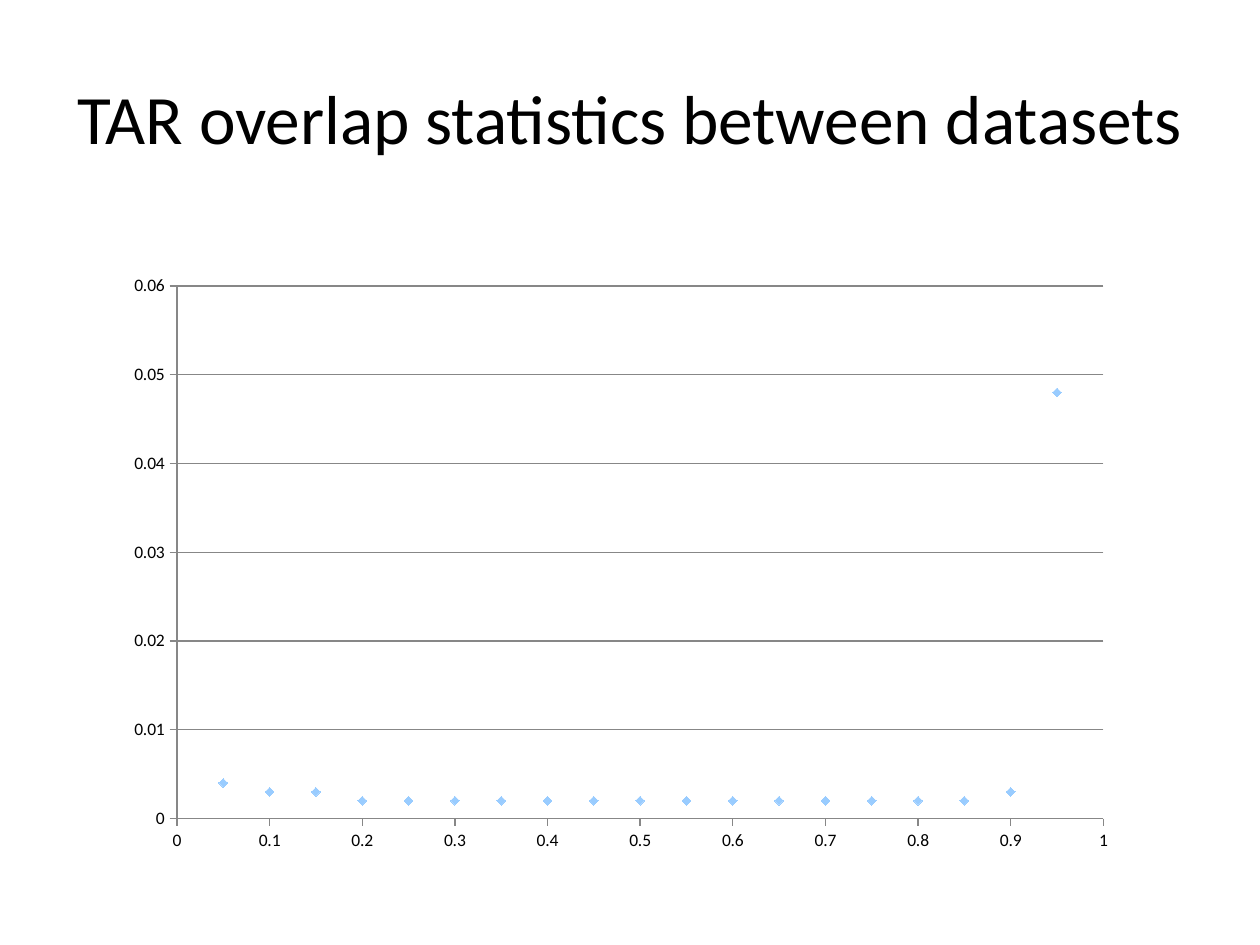
from dataclasses import dataclass

from lxml import etree
from pptx import Presentation
from pptx.chart.data import XyChartData
from pptx.dml.color import RGBColor
from pptx.enum.chart import XL_CHART_TYPE, XL_MARKER_STYLE, XL_TICK_MARK
from pptx.enum.text import MSO_ANCHOR, PP_ALIGN
from pptx.oxml.ns import qn
from pptx.util import Inches, Pt

SCATTER = XL_CHART_TYPE.XY_SCATTER
DIAMOND = XL_MARKER_STYLE.DIAMOND
TICK_OUTSIDE = XL_TICK_MARK.OUTSIDE
TICK_NONE = XL_TICK_MARK.NONE
CENTER = PP_ALIGN.CENTER
MIDDLE = MSO_ANCHOR.MIDDLE

BLACK = RGBColor(0x00, 0x00, 0x00)
GRAY = RGBColor(0x87, 0x87, 0x87)
LIGHT_BLUE = RGBColor(0x99, 0xCC, 0xFF)
FONT = "Calibri"

OVERLAP_STEP = 0.05
FREQUENCIES = [0.004, 0.003, 0.003] + [0.002] * 14 + [0.003, 0.048]


@dataclass(frozen=True)
class AxisScale:
    maximum: float
    step: float
    gridlines: bool


OVERLAP_SCALE = AxisScale(1, 0.1, False)
FREQUENCY_SCALE = AxisScale(0.06, 0.01, True)


def format_axis(axis, scale: AxisScale) -> None:
    axis.minimum_scale = 0
    axis.maximum_scale = scale.maximum
    axis.major_unit = scale.step
    axis.major_tick_mark = TICK_OUTSIDE
    axis.minor_tick_mark = TICK_NONE
    axis.tick_labels.number_format = "General"
    axis.tick_labels.number_format_is_linked = False
    axis.has_major_gridlines = scale.gridlines
    lines = [axis.format.line]
    if scale.gridlines:
        lines.append(axis.major_gridlines.format.line)
    for line in lines:
        line.color.rgb = GRAY
        line.width = Pt(0.75)


def set_plot_area(chart, x: float, y: float, w: float, h: float) -> None:
    """Fix the inner plot area, in fractions of the chart frame."""
    plot_area = chart.plots[0]._element.getparent()
    for old_layout in plot_area.findall(qn("c:layout")):
        plot_area.remove(old_layout)
    layout = etree.Element(qn("c:layout"))
    plot_area.insert(0, layout)
    manual = etree.SubElement(layout, qn("c:manualLayout"))
    settings = {"layoutTarget": "inner", "xMode": "edge", "yMode": "edge",
                "x": x, "y": y, "w": w, "h": h}
    for tag, value in settings.items():
        etree.SubElement(manual, qn(f"c:{tag}")).set("val", str(value))


def add_title(slide, wording: str) -> None:
    title = slide.shapes.title
    title.left, title.top = Inches(0.5), Inches(0.3)
    title.width, title.height = Inches(9), Inches(1.25)
    frame = title.text_frame
    frame.text = wording
    frame.vertical_anchor = MIDDLE
    frame.paragraphs[0].alignment = CENTER
    font = frame.paragraphs[0].runs[0].font
    font.name, font.size = FONT, Pt(39.6)
    font.color.rgb = BLACK


def add_overlap_chart(slide) -> None:
    data = XyChartData()
    points = data.add_series("Series 1")
    for index, frequency in enumerate(FREQUENCIES, start=1):
        points.add_data_point(round(index * OVERLAP_STEP, 2), frequency)
    chart = slide.shapes.add_chart(
        SCATTER, Inches(0.92), Inches(2.08), Inches(8.08), Inches(4.75), data
    ).chart
    chart.has_legend = False
    chart.has_title = False
    chart.font.name, chart.font.size = FONT, Pt(10)
    chart.font.color.rgb = BLACK
    format_axis(chart.category_axis, OVERLAP_SCALE)
    format_axis(chart.value_axis, FREQUENCY_SCALE)
    set_plot_area(chart, 0.06, 0.04, 0.91, 0.89)

    chart.plots[0].vary_by_categories = False
    series = chart.plots[0].series[0]
    series.smooth = False
    series.format.line.fill.background()
    series.marker.style, series.marker.size = DIAMOND, 5
    series.marker.format.fill.solid()
    series.marker.format.fill.fore_color.rgb = LIGHT_BLUE
    series.marker.format.line.color.rgb = LIGHT_BLUE


def main() -> None:
    deck = Presentation()
    deck.slide_width, deck.slide_height = Inches(10), Inches(7.5)
    slide = deck.slides.add_slide(deck.slide_layouts.get_by_name("Title Only"))
    add_title(slide, "TAR overlap statistics between datasets")
    add_overlap_chart(slide)
    deck.save("out.pptx")


if __name__ == "__main__":
    main()
